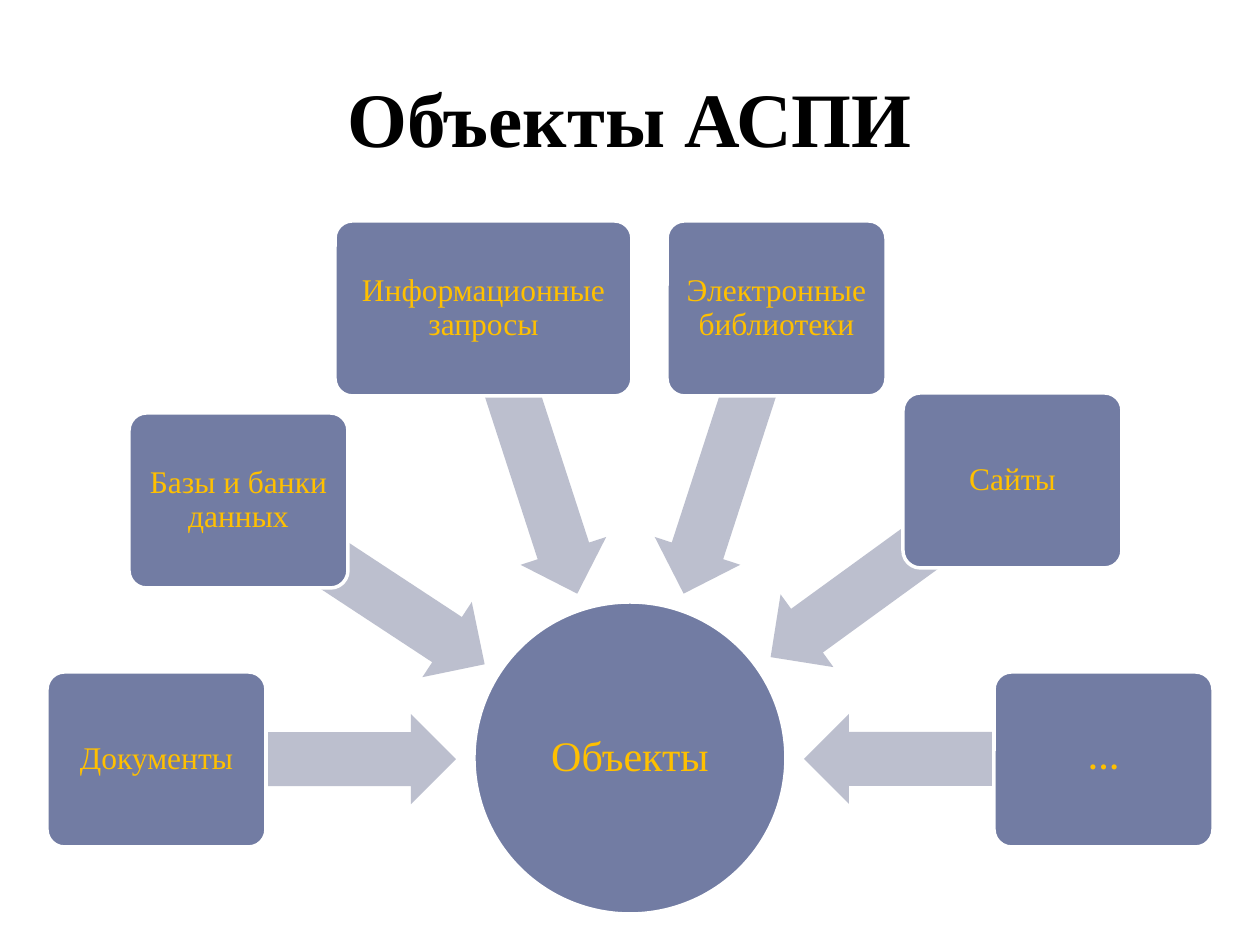
from typing import Any, NamedTuple

from pptx import Presentation
from pptx.dml.color import RGBColor
from pptx.enum.shapes import MSO_SHAPE
from pptx.enum.text import MSO_ANCHOR, PP_ALIGN
from pptx.util import Emu, Pt

EMU_PER_INCH = 914400
PX_PER_INCH = 126
FONT = "Times New Roman"
NODE_FILL = "727CA3"
ARROW_FILL = "BCBFCE"
OUTLINE = "FFFFFF"
LABEL_COLOR = "FFC000"
NODE_HEIGHT = 175
ARROW_HEIGHT = 90


class Arrow(NamedTuple):
    left: int
    top: int
    rotation: float
    width: int = 300


class Node(NamedTuple):
    text: str
    left: int
    top: int
    arrow: Arrow
    width: int = 219
    bold: bool = False


NODES = [
    Node("Документы", 47, 672, Arrow(156, 714, 180)),
    Node("Базы и банки данных", 129, 413, Arrow(213, 538, 213.3, 296)),
    Node("Информационные запросы", 335, 221, Arrow(381, 406, 252), width=297),
    Node("Электронные библиотеки", 667, 221, Arrow(580, 406, 288)),
    Node("Сайты", 903, 393, Arrow(742, 524, 324)),
    Node("…", 994, 672, Arrow(804, 714, 0), bold=True),
]


def px(length: int) -> Emu:
    return Emu(round(length * EMU_PER_INCH / PX_PER_INCH))


def color(value: str) -> RGBColor:
    return RGBColor.from_string(value)


def set_attributes(target: Any, values: dict[str, Any]) -> None:
    for name, value in values.items():
        setattr(target, name, value)


def write_text(shape: Any, text: str, size: int, text_color: str,
               bold: bool = False, inset: int = 0, spacing: float = 1.0) -> None:
    """Put one centred paragraph into the shape."""
    frame = shape.text_frame
    set_attributes(frame, {
        "word_wrap": True, "vertical_anchor": MSO_ANCHOR.MIDDLE,
        "margin_left": px(inset), "margin_right": px(inset),
        "margin_top": px(inset), "margin_bottom": px(inset),
    })
    paragraph = frame.paragraphs[0]
    set_attributes(paragraph, {"alignment": PP_ALIGN.CENTER, "line_spacing": spacing})
    run = paragraph.add_run()
    run.text = text
    set_attributes(run.font, {"name": FONT, "size": Pt(size), "bold": bold})
    run.font.color.rgb = color(text_color)


def add_filled_shape(slide: Any, kind: MSO_SHAPE, box: tuple[int, int, int, int],
                     fill: str, adjustments: tuple[float, ...] = (),
                     outlined: bool = True) -> Any:
    shape = slide.shapes.add_shape(kind, *map(px, box))
    shape.shadow.inherit = False
    shape.fill.solid()
    shape.fill.fore_color.rgb = color(fill)
    if outlined:
        shape.line.color.rgb = color(OUTLINE)
        shape.line.width = Pt(2)
    else:
        shape.line.fill.background()
    for index, value in enumerate(adjustments):
        shape.adjustments[index] = value
    return shape


def add_title(slide: Any) -> None:
    title = slide.shapes.add_textbox(px(63), px(38), px(1134), px(158))
    write_text(title, "Объекты АСПИ", 44, "000000", bold=True, inset=6)


def add_hub(slide: Any) -> None:
    hub = add_filled_shape(slide, MSO_SHAPE.OVAL, (474, 602, 312, 312), NODE_FILL)
    write_text(hub, "Объекты", 24, LABEL_COLOR, inset=2, spacing=0.9)


def add_node(slide: Any, node: Node) -> None:
    """Draw the arrow to the hub, then the labelled box over its tail."""
    arrow = node.arrow
    arrow_shape = add_filled_shape(
        slide, MSO_SHAPE.LEFT_ARROW, (arrow.left, arrow.top, arrow.width, ARROW_HEIGHT),
        ARROW_FILL, (0.6, 0.5), outlined=False)
    arrow_shape.rotation = arrow.rotation
    box = add_filled_shape(
        slide, MSO_SHAPE.ROUNDED_RECTANGLE,
        (node.left, node.top, node.width, NODE_HEIGHT), NODE_FILL, (0.1,))
    write_text(box, node.text, 18, LABEL_COLOR, node.bold, inset=5, spacing=0.9)


def main() -> None:
    presentation = Presentation()
    set_attributes(presentation, {"slide_width": px(1260), "slide_height": px(945)})
    slide = presentation.slides.add_slide(presentation.slide_layouts[6])
    add_title(slide)
    add_hub(slide)
    for node in NODES:
        add_node(slide, node)
    presentation.save("out.pptx")


if __name__ == "__main__":
    main()
